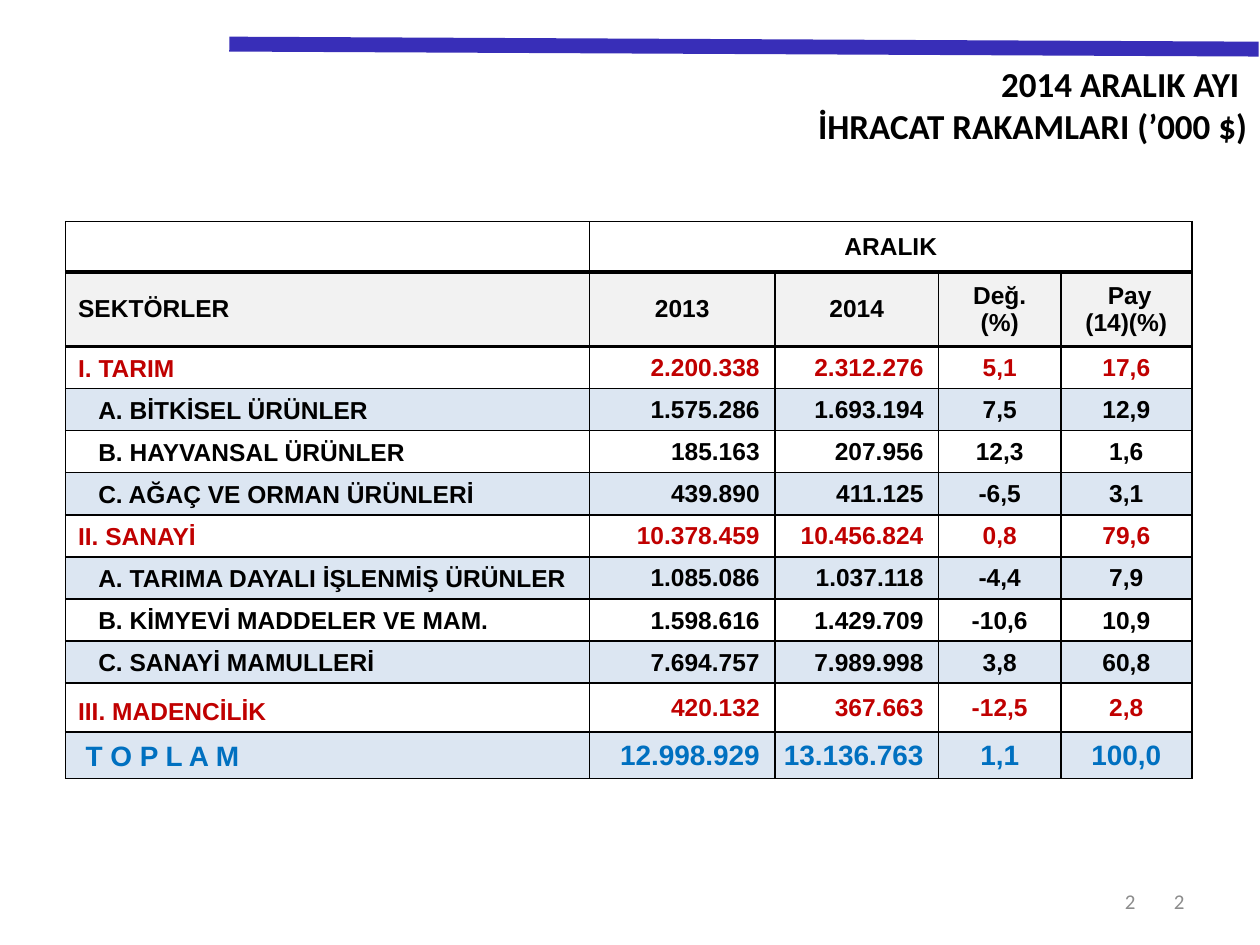
"""Build the December 2014 export figures slide."""
import pptx
import pptx.util
import pptx.dml.color
import pptx.enum.shapes
import pptx.enum.text
import pptx.oxml.ns
import lxml.etree

TITLE = ["2014 ARALIK AYI ", "İHRACAT RAKAMLARI (’000 $)"]
PAGE = ["2"]
GROUP = "ARALIK"
HEADS = ["SEKTÖRLER", "2013", "2014", "Değ. (%)", " Pay\n(14)(%)"]
DATA = [
    ("main", "I. TARIM", "2.200.338", "2.312.276", "5,1", "17,6"),
    ("sub", "A. BİTKİSEL ÜRÜNLER", "1.575.286", "1.693.194", "7,5", "12,9"),
    ("sub", "B. HAYVANSAL ÜRÜNLER", "185.163", "207.956", "12,3", "1,6"),
    ("sub", "C. AĞAÇ VE ORMAN ÜRÜNLERİ", "439.890", "411.125", "-6,5", "3,1"),
    ("main", "II. SANAYİ", "10.378.459", "10.456.824", "0,8", "79,6"),
    ("sub", "A. TARIMA DAYALI İŞLENMİŞ ÜRÜNLER", "1.085.086", "1.037.118", "-4,4", "7,9"),
    ("sub", "B. KİMYEVİ MADDELER VE MAM.", "1.598.616", "1.429.709", "-10,6", "10,9"),
    ("sub", "C. SANAYİ MAMULLERİ", "7.694.757", "7.989.998", "3,8", "60,8"),
    ("main", "III. MADENCİLİK", "420.132", "367.663", "-12,5", "2,8"),
    ("sum", "T O P L A M", "12.998.929", "13.136.763", "1,1", "100,0"),
]
THEME = {
    "sans": "Arial", "head": "Calibri",
    "ink": "000000", "rule": "382EB8", "gray": "8C8C8C",
    "pale": "F2F2F2", "band": "DCE6F2",
    "main": ("C00000", 14, 0.1), "sub": ("000000", 14, 0.26),
    "sum": ("0070C0", 16, 0.16),
    "title": 20, "body": 14, "page": 12,
}
WIDE, HIGH = 10, 7.5
STEP = WIDE / 100
COLS = [41.6, 14.7, 13, 9.7, 10.4]
ROWS = [4, 5.9] + [3.33] * 8 + [3.9, 3.66]
ALIGN = pptx.enum.text.PP_ALIGN
ANCHOR = pptx.enum.text.MSO_ANCHOR
inch = pptx.util.Inches
tint = pptx.dml.color.RGBColor.from_string


def unit(count):
    return inch(count * STEP)


def put(frame, lines, size=THEME["body"], font=THEME["sans"], color=THEME["ink"],
        bold=True, align=ALIGN.CENTER):
    for num, line in enumerate(lines):
        para = frame.paragraphs[0] if num == 0 else frame.add_paragraph()
        para.alignment = align
        run = para.add_run()
        run.text = line
        run.font.size = pptx.util.Pt(size)
        run.font.name = font
        run.font.bold = bold
        run.font.color.rgb = tint(color)


def label(slide, box, lines, anchor, **form):
    frame = slide.shapes.add_textbox(*map(unit, box)).text_frame
    frame.word_wrap = True
    frame.vertical_anchor = anchor
    put(frame, lines, font=THEME["head"], align=ALIGN.RIGHT, **form)


def edge(cell, top, low):
    prop = cell._tc.get_or_add_tcPr()
    for side, width in zip("LRTB", (1, 1, top, low)):
        line = lxml.etree.SubElement(prop, pptx.oxml.ns.qn("a:ln" + side),
                                     w=str(pptx.util.Pt(width)))
        fill = lxml.etree.SubElement(line, pptx.oxml.ns.qn("a:solidFill"))
        lxml.etree.SubElement(fill, pptx.oxml.ns.qn("a:srgbClr"), val=THEME["ink"])


def paint(cell, color):
    if color:
        cell.fill.solid()
        cell.fill.fore_color.rgb = tint(color)
    else:
        cell.fill.background()


def fill_row(table, row, kind, texts):
    color, size, inset = THEME[kind]
    for col, text in enumerate(texts):
        cell = table.cell(row, col)
        name, money = col == 0, col in (1, 2)
        cell.vertical_anchor = ANCHOR.BOTTOM if name else ANCHOR.MIDDLE
        cell.margin_left = inch(inset if name else 0.01)
        if not name:
            cell.margin_top, cell.margin_bottom = inch(0.01), 0
            cell.margin_right = inch(0.12 if money else 0.01)
        align = ALIGN.LEFT if name else ALIGN.RIGHT if money else ALIGN.CENTER
        put(cell.text_frame, [text], size=size, color=color, align=align)


def grid(slide):
    shape = slide.shapes.add_table(len(ROWS), len(COLS), unit(5.2), unit(17.6),
                                   unit(sum(COLS)), unit(sum(ROWS)))
    table = shape.table
    table.first_row = table.horz_banding = False
    for col, width in zip(table.columns, COLS):
        col.width = unit(width)
    for row, height in zip(table.rows, ROWS):
        row.height = unit(height)
    thick = {1: 2.25, 2: 2}
    for row in range(len(ROWS)):
        shade = THEME["pale"] if row == 1 else THEME["band"] if row > 2 and row % 2 else None
        for col in range(len(COLS)):
            cell = table.cell(row, col)
            edge(cell, thick.get(row, 1), thick.get(row + 1, 1))
            paint(cell, shade)
    span = table.cell(0, 1)
    span.merge(table.cell(0, len(COLS) - 1))
    span.vertical_anchor = ANCHOR.MIDDLE
    put(span.text_frame, [GROUP])
    for col, text in enumerate(HEADS):
        cell = table.cell(1, col)
        cell.vertical_anchor = ANCHOR.MIDDLE
        put(cell.text_frame, text.split("\n"), align=ALIGN.CENTER if col else ALIGN.LEFT)
    for row, (kind, *texts) in enumerate(DATA, 2):
        fill_row(table, row, kind, texts)


def main():
    deck = pptx.Presentation()
    deck.slide_width, deck.slide_height = inch(WIDE), inch(HIGH)
    slide = deck.slides.add_slide(deck.slide_layouts[6])
    rule = slide.shapes.add_connector(pptx.enum.shapes.MSO_CONNECTOR.STRAIGHT,
                                      *map(unit, (18.2, 3.5, 99.9, 3.9)))
    rule.line.color.rgb = tint(THEME["rule"])
    rule.line.width = pptx.util.Pt(8.5)
    lxml.etree.SubElement(rule._element.spPr, pptx.oxml.ns.qn("a:effectLst"))
    for left, width in ((71.7, 23.3), (70.1, 21)):
        label(slide, (left, 69.5, width, 4), PAGE, ANCHOR.MIDDLE,
              size=THEME["page"], color=THEME["gray"], bold=False)
    label(slide, (10.6, 4.5, 89.4, 7.7), TITLE, ANCHOR.TOP, size=THEME["title"])
    grid(slide)
    deck.save("out.pptx")


if __name__ == "__main__":
    main()
